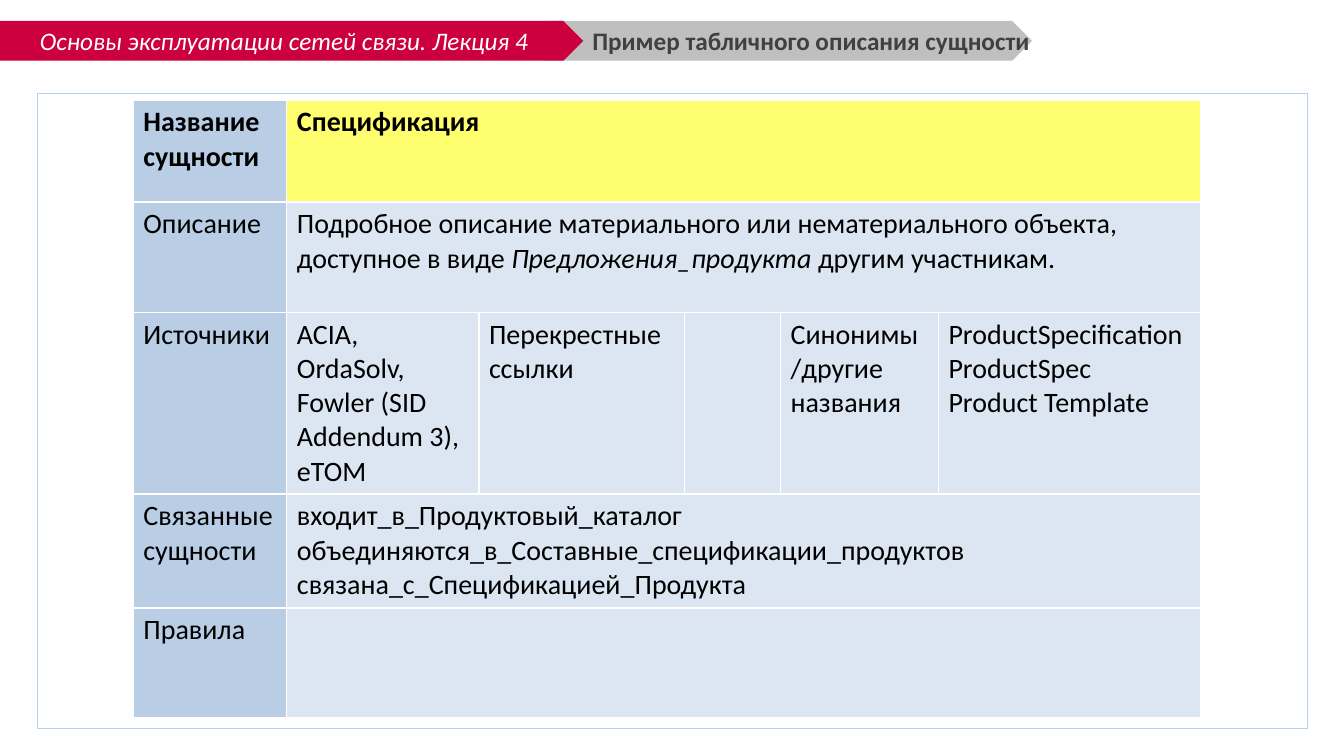
from pptx import Presentation
from pptx import util as u
from pptx.dml.color import RGBColor
from pptx.enum import shapes, text

CRIMSON = RGBColor(0xCC, 0x00, 0x3F)
SILVER = RGBColor(0xBF, 0xBF, 0xBF)
FRAME_BLUE = RGBColor(0xB8, 0xD0, 0xED)
LABEL_BLUE = RGBColor(0xB9, 0xCD, 0xE5)
VALUE_BLUE = RGBColor(0xDC, 0xE6, 0xF2)
YELLOW = RGBColor(0xFF, 0xFE, 0x6E)
WHITE = RGBColor(0xFF, 0xFF, 0xFF)
BLACK = RGBColor(0x00, 0x00, 0x00)
GRAY = RGBColor(0x40, 0x40, 0x40)


def style_font(font, size, color, bold=False, italic=False):
    font.name = "Calibri"
    font.size = u.Pt(size)
    font.color.rgb = color
    font.bold = bold
    font.italic = italic


def add_panel(kind, left, top, width, height, fill=None):
    panel = page.shapes.add_shape(kind, u.Cm(left), u.Cm(top), u.Cm(width), u.Cm(height))
    panel.shadow.inherit = False
    panel.line.fill.background()
    if fill is None:
        panel.fill.background()
    else:
        panel.fill.solid()
        panel.fill.fore_color.rgb = fill
    return panel


deck = Presentation()
deck.slide_width = u.Cm(33.87)
deck.slide_height = u.Cm(19.05)
page = deck.slides.add_slide(deck.slide_layouts[6])

BAR_TOP, BAR_HEIGHT = 0.53, 1
PENTAGON = shapes.MSO_SHAPE.PENTAGON
add_panel(PENTAGON, 13.74, BAR_TOP, 12.27, BAR_HEIGHT, SILVER)
frame = add_panel(shapes.MSO_SHAPE.RECTANGLE, 0.94, 2.34, 32, 16)
frame.line.color.rgb = FRAME_BLUE
frame.line.width = u.Pt(0.25)

lecture = add_panel(PENTAGON, -0.13, BAR_TOP, 14.83, BAR_HEIGHT, CRIMSON)
lecture.text_frame.text = "Основы эксплуатации сетей связи. Лекция 4"
lecture.text_frame.vertical_anchor = text.MSO_ANCHOR.MIDDLE
para = lecture.text_frame.paragraphs[0]
para.alignment = text.PP_ALIGN.CENTER
style_font(para.runs[0].font, 18, WHITE, italic=True)

title = page.shapes.add_textbox(u.Cm(14.68), u.Cm(BAR_TOP), u.Cm(11.68), u.Cm(BAR_HEIGHT))
title.text_frame.word_wrap = True
title.text_frame.margin_right = 0
title.text_frame.vertical_anchor = text.MSO_ANCHOR.MIDDLE
title.text_frame.text = "Пример табличного описания сущности"
style_font(title.text_frame.paragraphs[0].runs[0].font, 18, GRAY, bold=True)

ITALIC_TERM = "Предложения_продукта"
rows = [
    ["Название сущности", "Спецификация"],
    ["Описание", ["Подробное описание материального или нематериального объекта, доступное в виде ",
                  ITALIC_TERM, " другим участникам."]],
    ["Источники", "ACIA, OrdaSolv, Fowler (SID Addendum 3), eTOM", "Перекрестные ссылки", "",
     "Синонимы/другие названия", "ProductSpecification ProductSpec\nProduct Template"],
    ["Связанные сущности", "входит_в_Продуктовый_каталог\n"
     "объединяются_в_Составные_спецификации_продуктов\nсвязана_с_Спецификацией_Продукта"],
    ["Правила", ""],
]
widths = [3.87, 4.84, 5.18, 2.42, 3.98, 6.6]
heights = [2.57, 2.78, 4.58, 2.87, 2.77]

table = page.shapes.add_table(len(rows), len(widths), u.Cm(3.36), u.Cm(2.52),
                              u.Cm(sum(widths)), u.Cm(sum(heights))).table
table.horz_banding = False
for column, width in zip(table.columns, widths):
    column.width = u.Cm(width)
for row, height in zip(table.rows, heights):
    row.height = u.Cm(height)

for r, values in enumerate(rows):
    if len(values) == 2:
        table.cell(r, 1).merge(table.cell(r, len(widths) - 1))
    for c, value in enumerate(values):
        cell = table.cell(r, c)
        cell.fill.solid()
        cell.fill.fore_color.rgb = LABEL_BLUE if c == 0 else YELLOW if r == 0 else VALUE_BLUE
        if isinstance(value, list):
            for part in value:
                cell.text_frame.paragraphs[0].add_run().text = part
        else:
            cell.text_frame.text = value
        for para in cell.text_frame.paragraphs:
            for span in para.runs:
                style_font(span.font, 20, BLACK, bold=r == 0, italic=span.text == ITALIC_TERM)

deck.save("out.pptx")
